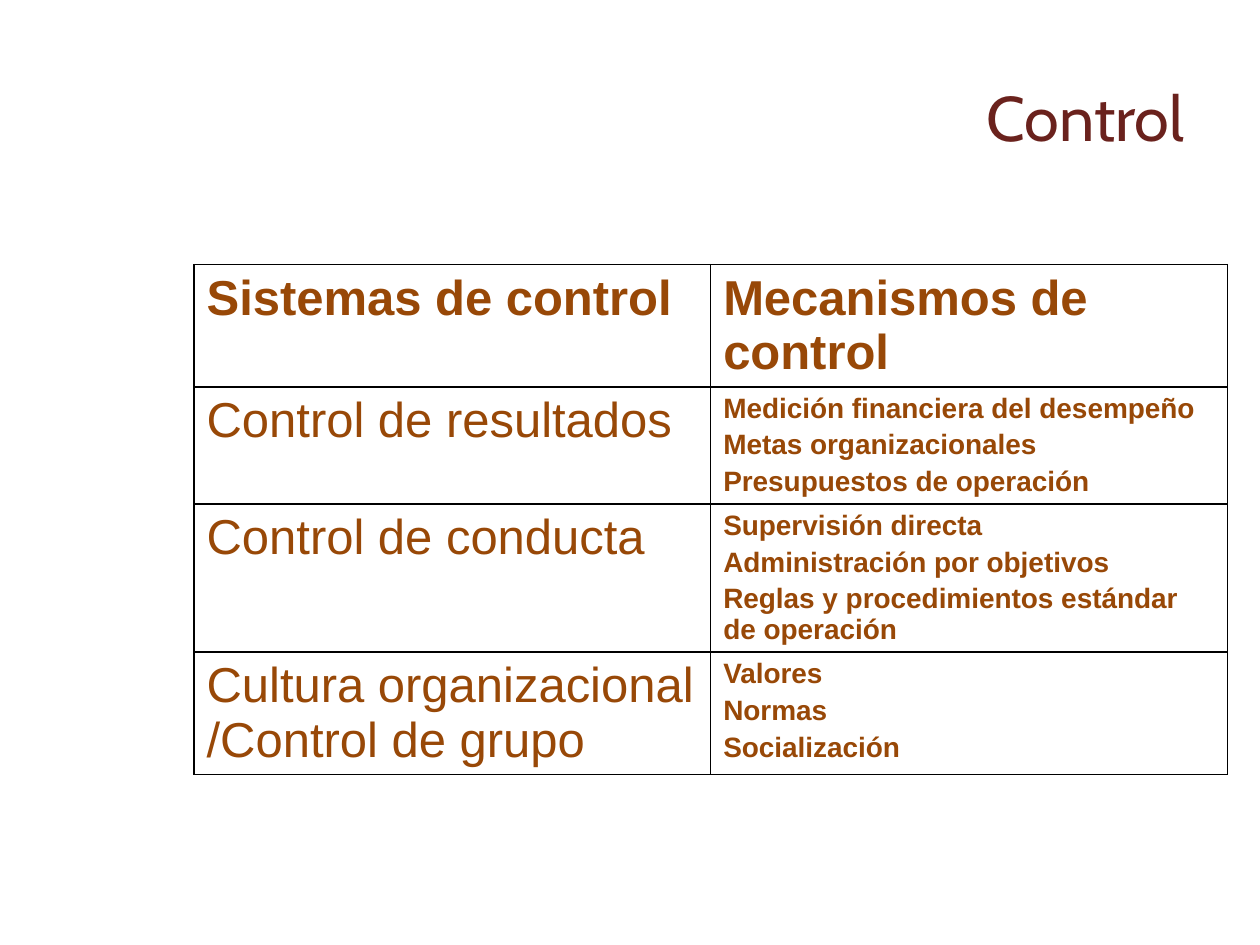
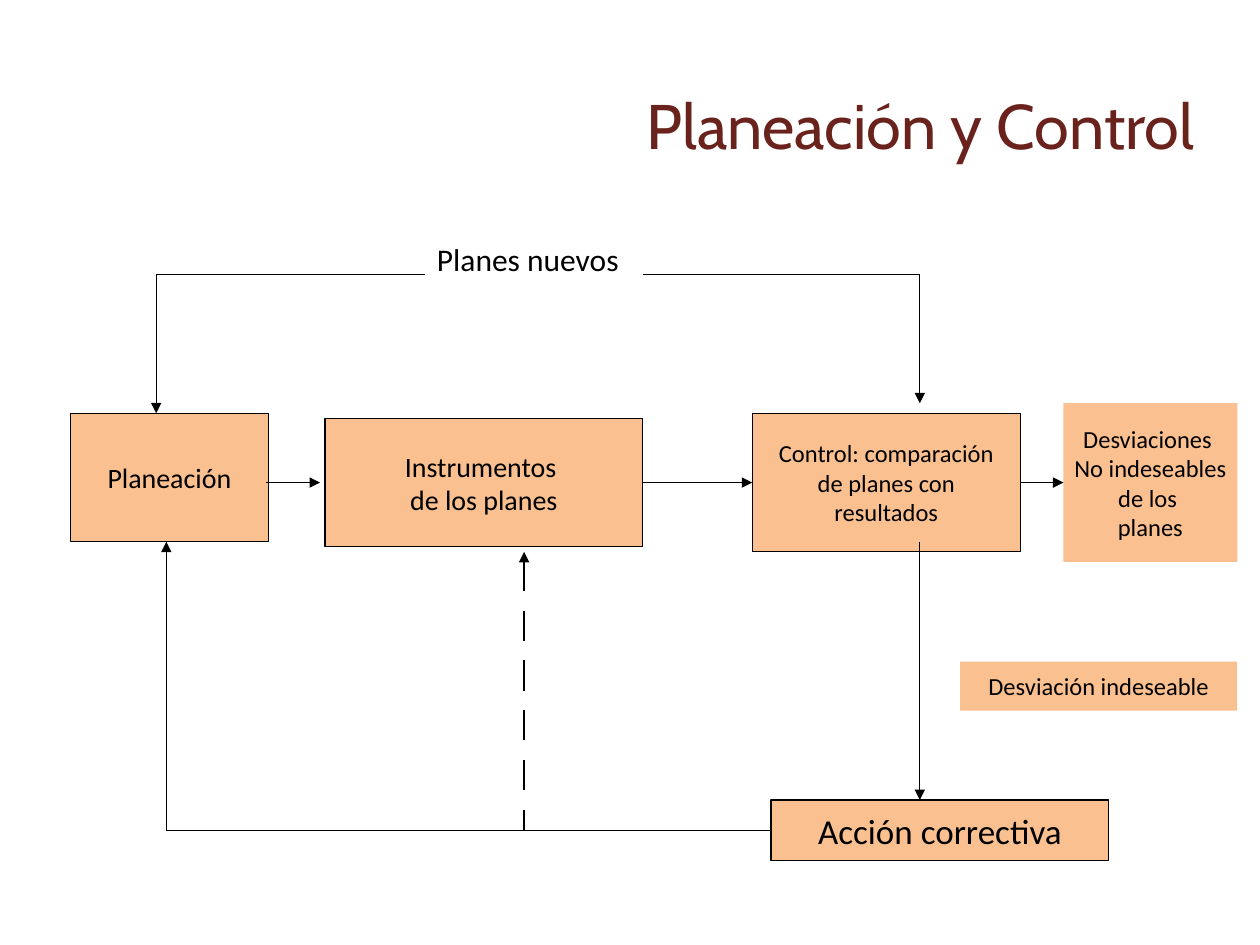
from dataclasses import dataclass

from lxml.etree import SubElement
from pptx import Presentation
from pptx.dml.color import RGBColor as RGB
from pptx.enum.shapes import MSO_CONNECTOR as CONN, MSO_SHAPE as SHAPE
from pptx.enum.text import MSO_ANCHOR as ANCHOR, PP_ALIGN as ALIGN
from pptx.oxml import parse_xml
from pptx.oxml.ns import nsdecls, qn
from pptx.util import Inches, Pt

COLS, ROWS = 100, 75
WIDTH, HEIGHT = Inches(10), Inches(7.5)
RIGHT, LEFT = 3, 1


@dataclass(frozen=True)
class Theme:
    title: RGB = RGB(0x6A, 0x22, 0x1D)
    table: RGB = RGB(0x98, 0x48, 0x07)
    box: RGB = RGB(0xFA, 0xC0, 0x90)
    ink: RGB = RGB(0, 0, 0)
    title_font: str = "Cabin"
    table_font: str = "Arial"
    flow_font: str = "Calibri"
    title_size: int = 36
    table_size: int = 28
    detail_size: int = 16
    step_size: int = 16
    note_size: int = 14
    label_size: int = 18
    action_size: int = 20
    line: float = 0.75
    border: float = 1


T = Theme()


def col(n):
    return round(WIDTH * n / COLS)


def row(n):
    return round(HEIGHT * n / ROWS)


def area(x, y, w, h):
    return col(x), row(y), col(w), row(h)


def apply(target, values):
    for name, value in values.items():
        setattr(target, name, value)


def write(tf, lines, font, size, color, align=ALIGN.LEFT, bold=False, gap=0):
    for i, line in enumerate(lines):
        p = tf.add_paragraph() if i else tf.paragraphs[0]
        p.alignment = align
        if i and gap:
            p.space_before = Pt(gap)
        r = p.add_run()
        r.text = line
        apply(r.font, {"name": font, "size": Pt(size), "bold": bold})
        r.font.color.rgb = color


def add_titled_slide(prs, title, x, y):
    s = prs.slides.add_slide(prs.slide_layouts[5])
    sp = s.shapes.title
    apply(sp, dict(zip(("left", "top", "width", "height"), area(x, y, 76.5, 12.5))))
    sp.text_frame.vertical_anchor = ANCHOR.MIDDLE
    write(sp.text_frame, [title], T.title_font, T.title_size, T.title, ALIGN.RIGHT)
    return s


def add_borders(cell):
    tc_pr = cell._tc.get_or_add_tcPr()
    for i, side in enumerate(("lnL", "lnR", "lnT", "lnB")):
        tc_pr.insert(i, parse_xml(
            f'<a:{side} {nsdecls("a")} w="{Pt(T.border)}"><a:solidFill>'
            f'<a:srgbClr val="{T.ink}"/></a:solidFill></a:{side}>'))


def add_control_table(s, x, y, widths, heights, records):
    frame = s.shapes.add_table(len(records), len(widths),
                               *area(x, y, sum(widths), sum(heights)))
    table = frame.table
    apply(table, {"first_row": False, "horz_banding": False})
    for c, width in zip(table.columns, widths):
        c.width = col(width)
    for i, (height, record) in enumerate(zip(heights, records)):
        table.rows[i].height = row(height)
        for j, lines in enumerate(record):
            cell = table.cell(i, j)
            cell.fill.background()
            add_borders(cell)
            size = T.detail_size if i and j else T.table_size
            write(cell.text_frame, lines, T.table_font, size, T.table,
                  bold=i == 0 or j == 1, gap=size * 0.2)


def add_box(s, x, y, w, h, lines, size, outlined=True):
    sp = s.shapes.add_shape(SHAPE.RECTANGLE, *area(x, y, w, h))
    sp.shadow.inherit = False
    sp.fill.solid()
    sp.fill.fore_color.rgb = T.box
    if outlined:
        sp.line.color.rgb = T.ink
        sp.line.width = Pt(T.line)
    else:
        sp.line.fill.background()
    apply(sp.text_frame, {"word_wrap": False, "vertical_anchor": ANCHOR.MIDDLE})
    write(sp.text_frame, lines, T.flow_font, size, T.ink, ALIGN.CENTER)
    return sp


def add_line(s, start, end, arrow=False, source=None, target=None):
    cx = s.shapes.add_connector(CONN.STRAIGHT, col(start[0]), row(start[1]),
                                col(end[0]), row(end[1]))
    cx.line.color.rgb = T.ink
    cx.line.width = Pt(T.line)
    if arrow:
        SubElement(cx.line._get_or_add_ln(), qn("a:tailEnd"), type="triangle")
    SubElement(cx._element.spPr, qn("a:effectLst"))
    if source is not None:
        cx.begin_connect(source, LEFT if start[0] > end[0] else RIGHT)
    if target is not None:
        cx.end_connect(target, LEFT)


def add_bent_arrow(s, start, corner, end, source=None):
    add_line(s, start, corner, source=source)
    add_line(s, corner, end, arrow=True)


def add_dashed_arrow(s, x, bottom, top, first=1.6, dash=2.4, pitch=3.94, count=5):
    add_line(s, (x, bottom), (x, bottom - first))
    for i in range(count):
        y = bottom - first * 2 - i * pitch
        last = i == count - 1
        add_line(s, (x, y), (x, top if last else y - dash), arrow=last)


def add_label(s, x, y, w, h, text):
    tf = s.shapes.add_textbox(*area(x, y, w, h)).text_frame
    tf.word_wrap = True
    write(tf, [text], T.flow_font, T.label_size, T.ink)


def build_control(prs):
    s = add_titled_slide(prs, "Control", 18.5, 3)
    add_control_table(s, 15.4, 21, (41, 41), (9.7, 9.3, 11.7, 9.7), [
        (["Sistemas de control"], ["Mecanismos de control"]),
        (["Control de resultados"],
         ["Medición financiera del desempeño", "Metas organizacionales",
          "Presupuestos de operación"]),
        (["Control de conducta"],
         ["Supervisión directa", "Administración por objetivos",
          "Reglas y procedimientos estándar de operación"]),
        (["Cultura organizacional /Control de grupo"],
         ["Valores", "Normas", "Socialización"]),
    ])


def build_planning(prs):
    s = add_titled_slide(prs, "Planeación y Control", 19.3, 3.6)
    plan_x, return_x, control_x = 12.4, 13.2, 73
    new_y, flow_y, action_y = 21.8, 38.3, 65.9

    add_box(s, 5.6, 32.8, 15.7, 10.2, ["Planeación"], T.step_size)
    tools = add_box(s, 25.8, 33.2, 25.2, 10.2,
                    ["Instrumentos ", "de los planes"], T.step_size)
    control = add_box(s, 59.7, 32.8, 21.3, 11,
                      ["Control: comparación", "de planes con", "resultados"],
                      T.note_size)
    deviations = add_box(s, 84.4, 32, 13.8, 12.6,
                         ["Desviaciones ", "No indeseables", "de los ", "planes"],
                         T.note_size, outlined=False)
    action = add_box(s, 61.2, 63.5, 26.8, 4.8, ["Acción correctiva"], T.action_size)
    add_box(s, 76.2, 52.5, 22, 3.9, ["Desviación indeseable"], T.note_size,
            outlined=False)

    add_line(s, (21.1, flow_y), (25.4, flow_y), arrow=True)
    add_line(s, (51, flow_y), (59.7, flow_y), True, tools, control)
    add_line(s, (81, flow_y), (84.4, flow_y), True, control, deviations)
    add_line(s, (control_x, 43), (control_x, 63.5), arrow=True)
    add_bent_arrow(s, (33.7, new_y), (plan_x, new_y), (plan_x, 32.8))
    add_bent_arrow(s, (51, new_y), (control_x, new_y), (control_x, 32))
    add_bent_arrow(s, (61.2, action_y), (return_x, action_y), (return_x, 43), action)
    add_dashed_arrow(s, 41.6, action_y, 43.8)
    add_label(s, 33.7, 18.6, 17.3, 4, "Planes nuevos")


def main():
    prs = Presentation()
    apply(prs, {"slide_width": WIDTH, "slide_height": HEIGHT})
    build_control(prs)
    build_planning(prs)
    prs.save("out.pptx")


if __name__ == "__main__":
    main()
